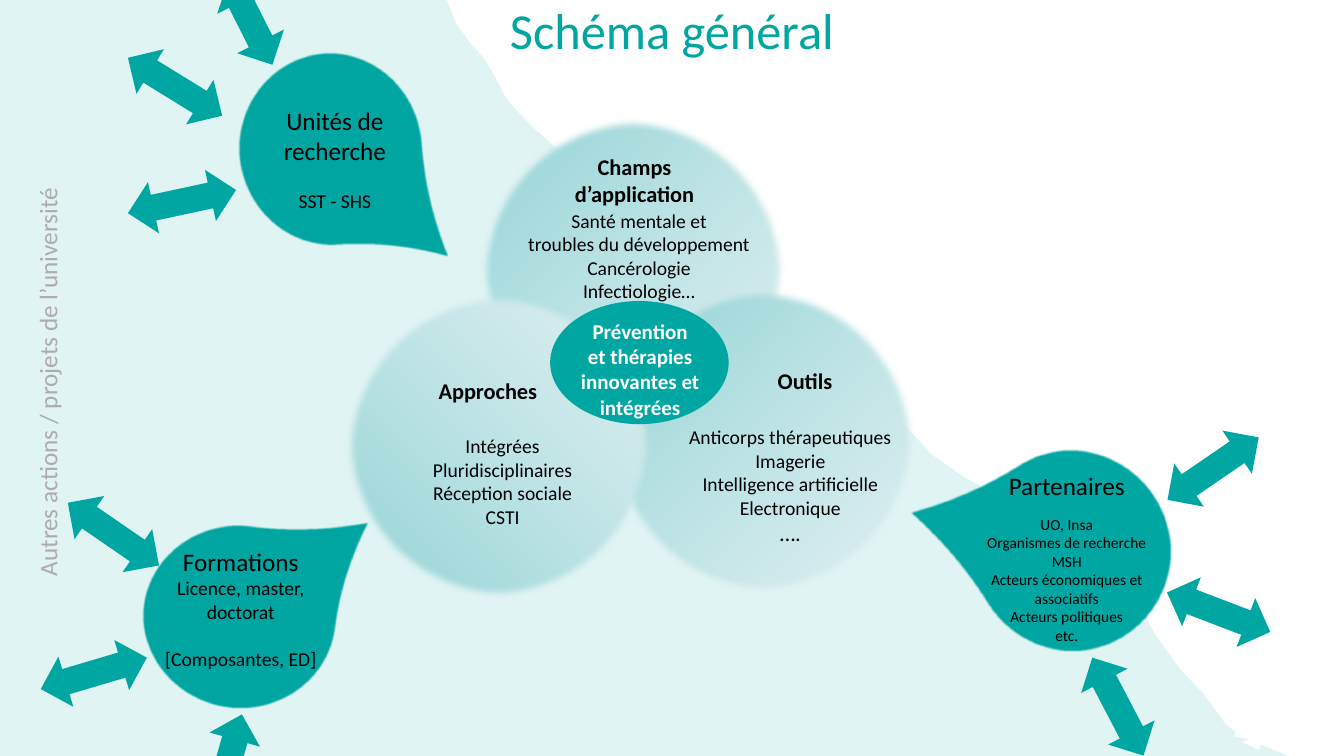
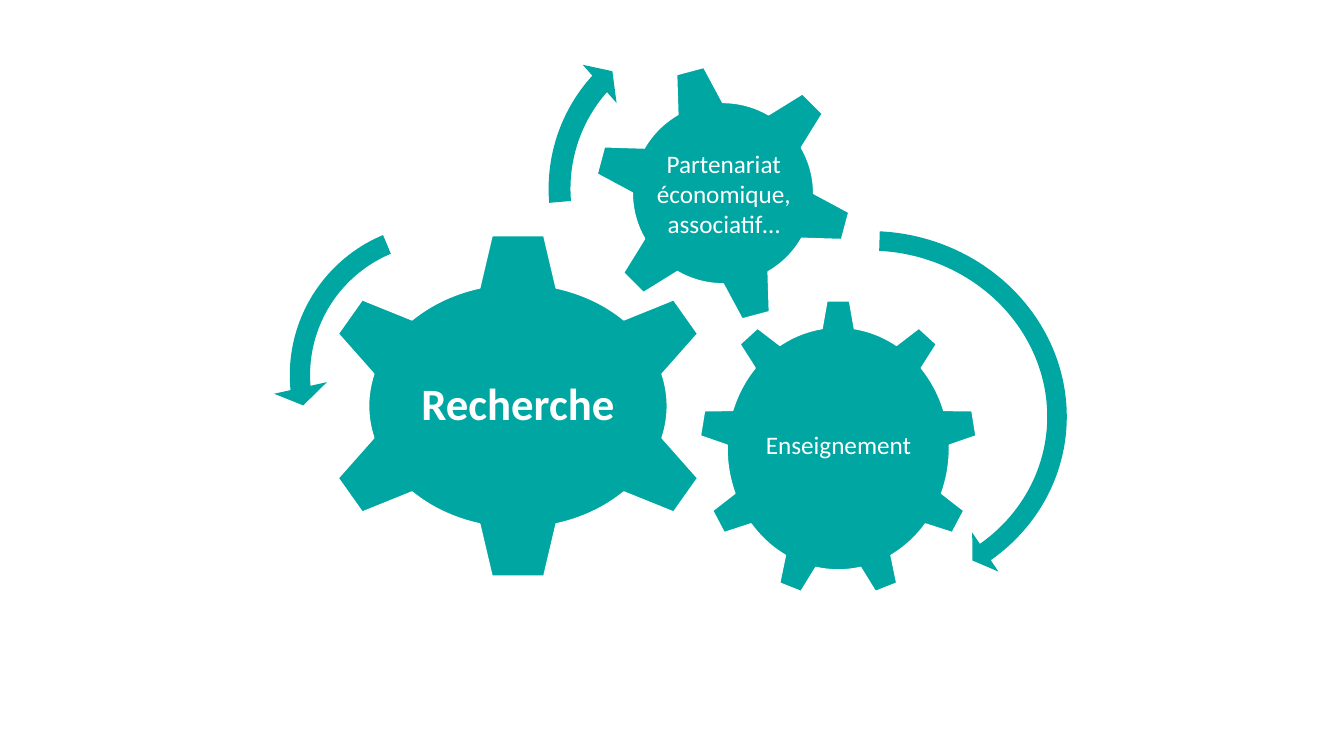
from lxml import etree
from pptx import Presentation
from pptx.dml.color import RGBColor
from pptx.enum.shapes import MSO_SHAPE as SHAPE
from pptx.enum.text import MSO_ANCHOR as ANCHOR, MSO_AUTO_SIZE as AUTO, PP_ALIGN as ALIGN
from pptx.oxml.ns import qn
from pptx.util import Pt

COLORS = {
    "teal": "00A6A2",
    "pale": "E0F0F1",
    "mid": "BEE3E4",
    "aqua": "93D4D7",
    "black": "000000",
    "white": "FFFFFF",
    "grey": "AFABAB",
}
FONT = "Calibri"
WIDTH, HEIGHT = 960, 540
ARROW_LENGTH, ARROW_HEIGHT = 79, 37.4

WASH_EDGE = [
    (326, 17), (336, 31), (346, 42), (353, 54), (362, 71), (371, 81),
    (384, 94), (400, 108), (412, 120), (424, 136), (431, 148), (443, 160),
    (456, 169), (470, 180), (486, 193), (505, 207), (523, 220), (543, 232),
    (562, 243), (579, 256), (603, 269), (624, 284), (639, 297), (652, 310),
    (666, 325), (689, 341), (711, 353), (736, 369), (759, 388), (774, 403),
    (793, 416), (814, 433), (825, 453), (843, 478), (860, 496), (876, 518),
    (883, 523), (881, 526), (892, 528), (887, 530), (899, 536), (901, 532),
    (920, 540), (0, 540), (0, 0),
]


def rgb(name):
    return RGBColor.from_string(COLORS[name])


def write(tf, lines, size=14, color="black", bold=False, before=0, spacing=1.0,
          anchor=ANCHOR.TOP, inset=None):
    tf.word_wrap = True
    tf.auto_size = AUTO.NONE
    tf.vertical_anchor = anchor
    if inset is not None:
        tf.margin_left = tf.margin_right = Pt(inset)
        tf.margin_top = tf.margin_bottom = Pt(inset)
    for i, line in enumerate(lines):
        content, own = line if isinstance(line, tuple) else (line, {})
        p = tf.paragraphs[0] if i == 0 else tf.add_paragraph()
        p.alignment = ALIGN.CENTER
        p.line_spacing = spacing
        p.space_before = Pt(own.get("before", before))
        r = p.add_run()
        r.text = content
        r.font.name = FONT
        r.font.size = Pt(own.get("size", size))
        r.font.bold = own.get("bold", bold)
        r.font.color.rgb = rgb(color)


def text(slide, box, lines, rotation=0, **fmt):
    sp = slide.shapes.add_textbox(*map(Pt, box))
    sp.rotation = rotation
    write(sp.text_frame, lines, **fmt)


def paint(sp, color="teal", line=None, soft=0):
    sp.shadow.inherit = False
    sp.fill.solid()
    sp.fill.fore_color.rgb = rgb(color)
    if line:
        sp.line.color.rgb = rgb(line)
        sp.line.width = Pt(1)
    else:
        sp.line.fill.background()
    if soft:
        effects = sp.element.spPr.find(qn("a:effectLst"))
        etree.SubElement(effects, qn("a:softEdge"), rad=str(Pt(soft)))


def shape(slide, kind, box, rotation=0, adj=(), **style):
    sp = slide.shapes.add_shape(kind, *map(Pt, box))
    sp.rotation = rotation
    for i, value in enumerate(adj):
        sp.adjustments[i] = value
    paint(sp, **style)
    return sp


def shade(sp, angle):
    sp.fill.gradient()
    grad = sp.element.spPr.find(qn("a:gradFill"))
    for child in list(grad):
        grad.remove(child)
    stops = etree.SubElement(grad, qn("a:gsLst"))
    for pos, name in ((0, "aqua"), (50, "mid"), (100, "pale")):
        gs = etree.SubElement(stops, qn("a:gs"), pos=str(pos * 1000))
        etree.SubElement(gs, qn("a:srgbClr"), val=COLORS[name])
    if angle is None:
        radial = etree.SubElement(grad, qn("a:path"))
        radial.set("path", "circle")
        etree.SubElement(radial, qn("a:fillToRect"), r="100000", b="100000")
    else:
        etree.SubElement(grad, qn("a:lin"), ang=str(angle * 60000), scaled="0")


def wash(slide, x, y):
    builder = slide.shapes.build_freeform(319, 0, scale=float(Pt(1)))
    builder.add_line_segments(WASH_EDGE, close=True)
    sp = builder.convert_to_shape(Pt(x), Pt(y))
    paint(sp)
    color = sp.element.spPr.find(qn("a:solidFill")).find(qn("a:srgbClr"))
    etree.SubElement(color, qn("a:alpha"), val="12000")


def title(slide, box, content):
    sp = slide.shapes.title
    sp.left, sp.top, sp.width, sp.height = map(Pt, box)
    write(sp.text_frame, [content], size=36, color="teal", spacing=0.9,
          anchor=ANCHOR.MIDDLE)


def field(slide, box, angle, head, head_box, body, body_box):
    x, y = box[:2]
    shade(shape(slide, SHAPE.OVAL, box, soft=5), angle)
    for lines, (dx, dy, w, h), fmt in (
        (head, head_box, {"size": 16, "bold": True}),
        (body, body_box, {}),
    ):
        text(slide, (x + dx, y + dy, w, h), lines, **fmt)


def core(slide, box, lines):
    x, y, w, h = box
    shape(slide, SHAPE.OVAL, box)
    text(slide, (x + 8, y + 9, w - 15, h - 9), lines, size=15, color="white", bold=True)


def satellite(slide, box, rotation, tip, lines, text_box, arrows):
    x, y, w, h = box
    dx, dy, tw, th = text_box
    shape(slide, SHAPE.TEAR, box, rotation, [tip], soft=1)
    text(slide, (x + dx, y + dy, tw, th), lines)
    for ax, ay, angle, length in arrows:
        left = x + w / 2 + ax - length / 2
        top = y + h / 2 + ay - ARROW_HEIGHT / 2
        shape(slide, SHAPE.LEFT_RIGHT_ARROW, (left, top, length, ARROW_HEIGHT), angle)


def gear(slide, kind, box, lines, text_box, rotation=0, **fmt):
    x, y = box[:2]
    dx, dy, w, h = text_box
    shape(slide, kind, box, rotation, line="white")
    text(slide, (x + dx, y + dy, w, h), lines, color="white", anchor=ANCHOR.MIDDLE,
         inset=2.5, **fmt)


def overview(slide):
    wash(slide, 0, 0)
    title(slide, (66, 0, 828, 47), "Schéma général")
    field(slide, (343, 84, 218, 218), 45,
          ["Champs", "d’application"], (18.5, 22, 183.5, 46),
          ["Santé mentale et", "troubles du développement", "Cancérologie",
           "Infectiologie…"], (-41.5, 61.5, 310, 76))
    field(slide, (436, 206, 218, 218), None,
          ["Outils"], (42, 53, 194, 27),
          ["Anticorps thérapeutiques", "Imagerie", "Intelligence artificielle",
           "Electronique", ("….", {"size": 16})], (25, 94, 207, 95))
    field(slide, (247, 209.5, 218, 218), 315,
          ["Approches"], (32.5, 56, 138, 27),
          ["Intégrées", "Pluridisciplinaires", "Réception sociale", "CSTI"],
          (29.5, 97, 165, 75))
    core(slide, (393, 215, 127.5, 88),
         ["Prévention", "et thérapies", "innovantes et intégrées"])
    satellite(slide, (167, 41, 138, 131), 86, 1.21,
              [("Unités de recherche", {"size": 18}), ("SST - SHS", {"before": 17})],
              (24, 30.5, 96.5, 85),
              [(-57, -91, 63.2, 69), (-111, -44.5, 31.6, ARROW_LENGTH),
               (-106, 37.5, 347.9, ARROW_LENGTH)])
    satellite(slide, (102, 375, 138, 131), 7.3, 1.21,
              [("Formations", {"size": 18}), "Licence, master, doctorat",
               ("[Composantes, ED]", {"before": 17})],
              (-1, 11.5, 142, 97),
              [(-90, -59, 34.5, ARROW_LENGTH), (-104, 40.5, 343.5, ARROW_LENGTH),
               (-8, 104.5, 105.7, 72)])
    partners = ["UO, Insa", "Organismes de recherche", "MSH",
                "Acteurs économiques et associatifs", "Acteurs politiques", "etc."]
    satellite(slide, (693.5, 322, 144, 142.5), 237.9, 1.18,
              [("Partenaires", {"size": 18})]
              + [(line, {"size": 11, "before": 0 if i else 10})
                 for i, line in enumerate(partners)],
              (3, 10.5, 131, 132),
              [(101, -58.5, 145.6, ARROW_LENGTH), (105, 44, 200.9, ARROW_LENGTH),
               (33, 111.5, 62.4, ARROW_LENGTH)])
    text(slide, (-126, 258.5, 320, 29), ["Autres actions / projets de l’université"],
         rotation=270, size=18, color="grey")


def gears(slide):
    gear(slide, SHAPE.GEAR_9, (499.5, 214, 198.5, 213), ["Enseignement"],
         (40, 49, 119, 111.5), size=18, spacing=0.9)
    gear(slide, SHAPE.GEAR_6, (226, 165.5, 288, 249), ["Recherche"],
         (68.5, 63, 151, 123), size=32, bold=True, spacing=0.9)
    gear(slide, SHAPE.GEAR_6, (424, 45.5, 185, 185),
         ["Partenariat", "économique, associatif…"],
         (41, 40.5, 104, 104), rotation=345, size=18)
    for kind, box, angle, adj in (
        (SHAPE.CIRCULAR_ARROW, (476, 155.5, 296, 279.5), 8.7,
         (0.05, 2.99, 25.47, 157.96, 0.06)),
        (SHAPE.LEFT_CIRCULAR_ARROW, (195, 147.5, 241, 241), 0,
         (0.06, 4.3, 104.89, 148.38, 0.08)),
        (SHAPE.CIRCULAR_ARROW, (381.5, 4.5, 260.5, 260.5), 0,
         (0.06, 3.94, 133.14, 105.08, 0.07)),
    ):
        shape(slide, kind, box, angle, adj)


def main():
    prs = Presentation()
    prs.slide_width, prs.slide_height = Pt(WIDTH), Pt(HEIGHT)
    title_only, blank = prs.slide_layouts[5], prs.slide_layouts[6]
    overview(prs.slides.add_slide(title_only))
    gears(prs.slides.add_slide(blank))
    prs.save("out.pptx")


if __name__ == "__main__":
    main()
